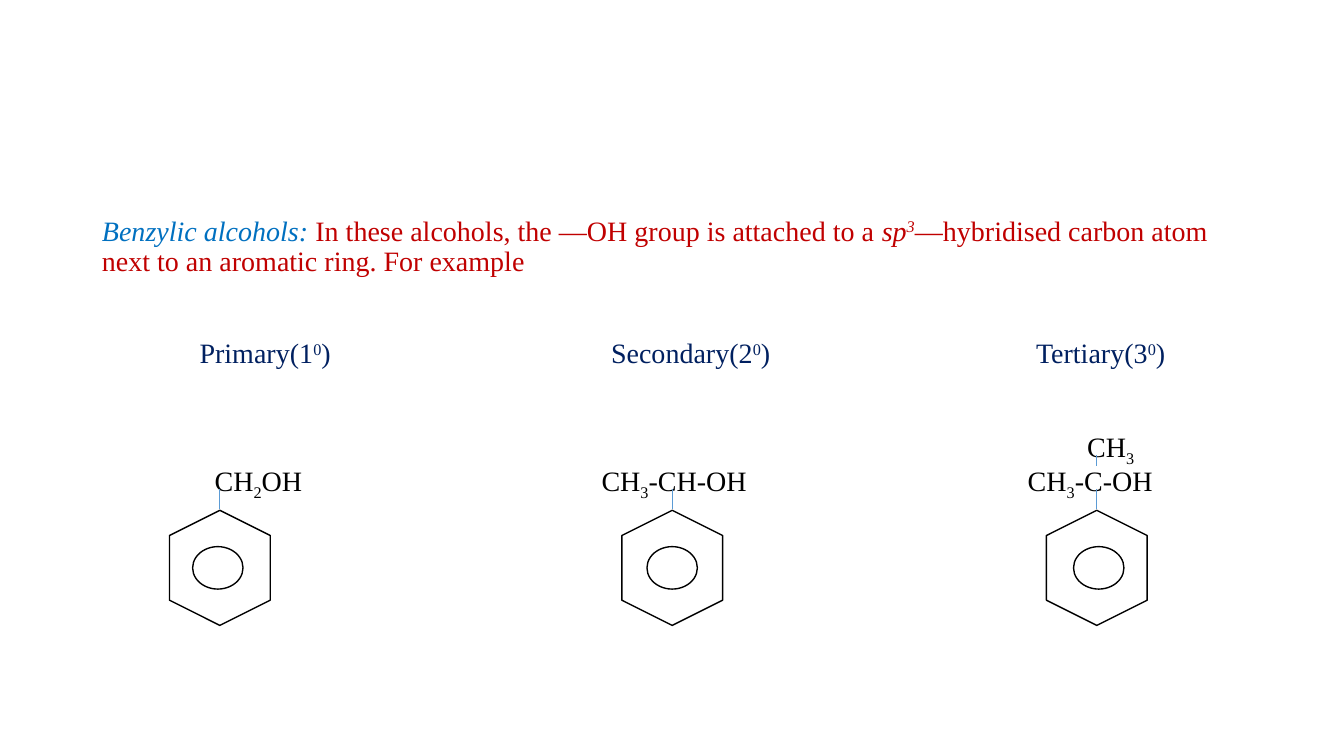
from lxml import etree
from pptx import Presentation
from pptx.dml.color import RGBColor
from pptx.enum import shapes, text
from pptx.oxml import ns
from pptx.util import Cm, Pt

FONT, SIZE = "Times New Roman", 20
BLUE, RED, NAVY, BLACK, WHITE, BOND = "0070C0", "C00000", "002060", "000000", "FFFFFF", "5B9BD5"
SUPER, SUB = 30, -25

# Runs: (text, format)
INTRO = [
    ("Benzylic alcohols: ", dict(color=BLUE, italic=True)),
    ("In these alcohols, the —OH group is attached to a ", {}),
    ("sp", dict(italic=True)),
    ("3", dict(italic=True, shift=SUPER)),
    ("—hybridised carbon atom next to an aromatic ring. For example", {}),
]
METHYL = [("CH", {}), ("3", dict(shift=SUB))]

# Lengths in cm: heading left, formula left, hexagon centre, ring centre
ALCOHOLS = [
    dict(name="Primary", degree="1", heading=5.03, formula=5.41, hexagon=5.54, ring=5.49,
         runs=[("CH", {}), ("2", dict(shift=SUB)), ("OH", {})]),
    dict(name="Secondary", degree="2", heading=15.4, formula=15.16, hexagon=16.94, ring=16.94,
         runs=METHYL + [("-CH-OH", {})]),
    dict(name="Tertiary", degree="3", heading=26.11, formula=25.9, hexagon=27.64, ring=27.69,
         runs=METHYL + [("-C-OH", {})]),
]
HEADING_TOP, FORMULA_TOP, METHYL_TOP, METHYL_LEFT = 8.46, 11.68, 10.83, 27.4
HEX_W, HEX_H, RING_W, RING_H, BENZENE_Y = 2.9, 2.54, 1.27, 1.07, 14.31
BOND_TOP, BOND_BOTTOM = 12.32, 12.83
METHYL_BOND_TOP, METHYL_BOND_BOTTOM = 11.46, 11.73


def rgb(value):
    return RGBColor.from_string(value)


def add_run(p, content, color=BLACK, italic=False, shift=0):
    """Add a run; shift is the super- or subscript offset in percent."""
    r = p.add_run()
    r.text = content
    r.font.name, r.font.size, r.font.italic = FONT, Pt(SIZE), italic
    r.font.color.rgb = rgb(color)
    if shift:
        r.font._element.set("baseline", str(shift * 1000))


def add_text(s, runs, left, top, width=5.0, height=0.9, color=BLACK, spacing=1.0):
    tf = s.shapes.add_textbox(Cm(left), Cm(top), Cm(width), Cm(height)).text_frame
    tf.word_wrap = True
    tf.vertical_anchor = text.MSO_ANCHOR.TOP
    tf.margin_left = tf.margin_right = tf.margin_top = tf.margin_bottom = 0
    p = tf.paragraphs[0]
    p.line_spacing = spacing
    for content, style in runs:
        add_run(p, content, **{"color": color, **style})


def add_outline(s, kind, x, y, width, height, rotation=0):
    """Add a white shape with a black outline, centred on x, y."""
    sp = s.shapes.add_shape(kind, Cm(x - width / 2), Cm(y - height / 2), Cm(width), Cm(height))
    sp.shadow.inherit = False
    sp.rotation = rotation
    sp.fill.solid()
    sp.fill.fore_color.rgb = rgb(WHITE)
    sp.line.color.rgb = rgb(BLACK)
    sp.line.width = Pt(1)


def add_bond(s, x, top, bottom):
    line = s.shapes.add_connector(shapes.MSO_CONNECTOR.STRAIGHT, Cm(x), Cm(top), Cm(x), Cm(bottom))
    line.line.color.rgb = rgb(BOND)
    line.line.width = Pt(0.5)
    etree.SubElement(line._element.spPr, ns.qn("a:effectLst"))


def main():
    prs = Presentation()
    prs.slide_width, prs.slide_height = Cm(33.87), Cm(19.05)
    s = prs.slides.add_slide(prs.slide_layouts[6])

    add_text(s, INTRO, 2.57, 5.47, width=28.8, height=1.5, color=RED, spacing=0.9)
    add_text(s, METHYL, METHYL_LEFT, METHYL_TOP)
    for a in ALCOHOLS:
        heading = [(f"{a['name']}({a['degree']}", {}), ("0", dict(shift=SUPER)), (")", {})]
        add_text(s, heading, a["heading"], HEADING_TOP, color=NAVY)
        add_text(s, a["runs"], a["formula"], FORMULA_TOP)
        add_outline(s, shapes.MSO_SHAPE.HEXAGON, a["hexagon"], BENZENE_Y, HEX_W, HEX_H, rotation=90)
        add_outline(s, shapes.MSO_SHAPE.OVAL, a["ring"], BENZENE_Y, RING_W, RING_H)
        add_bond(s, a["hexagon"], BOND_TOP, BOND_BOTTOM)
    add_bond(s, ALCOHOLS[-1]["hexagon"], METHYL_BOND_TOP, METHYL_BOND_BOTTOM)

    prs.save("out.pptx")


if __name__ == "__main__":
    main()
